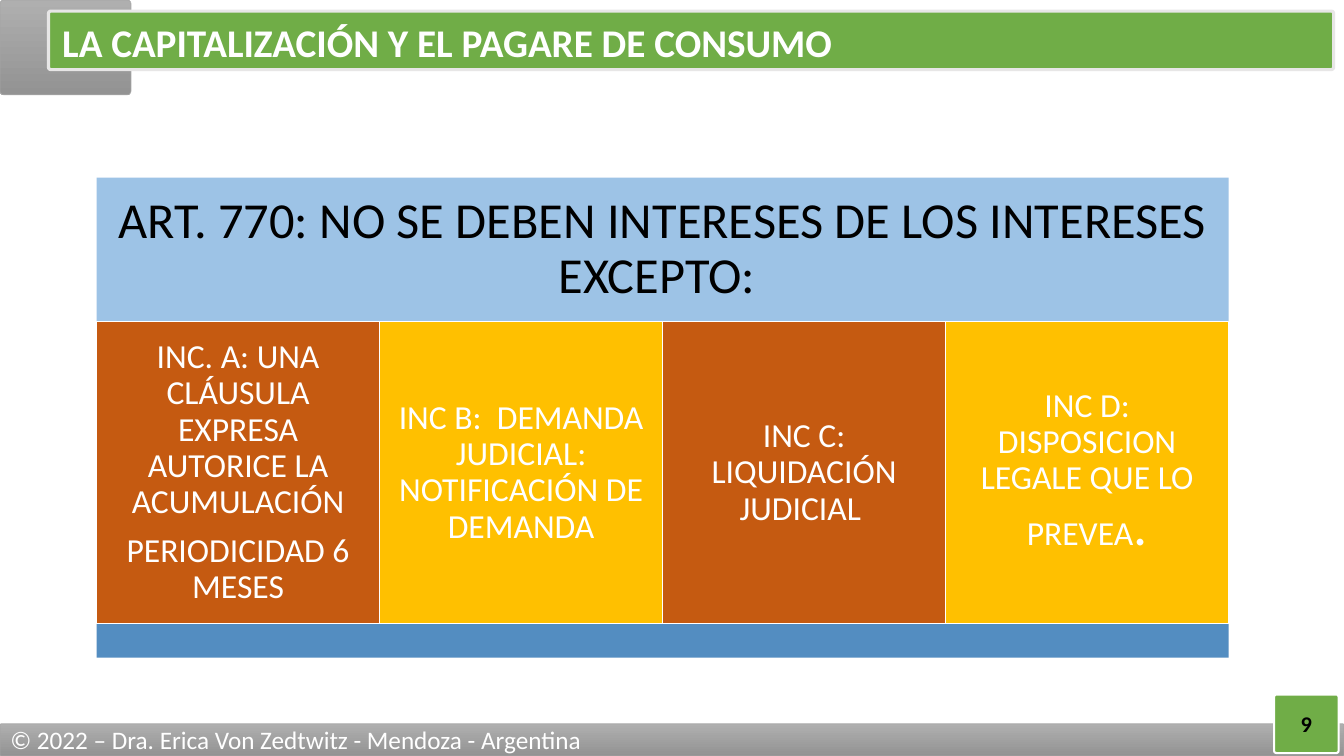
from pptx import Presentation
from pptx.dml.color import RGBColor
from pptx.enum.shapes import MSO_SHAPE as Shape
from pptx.enum.text import MSO_ANCHOR as Anchor, PP_ALIGN as Align
from pptx.util import Pt

# Content
TITLE = "LA CAPITALIZACIÓN Y EL PAGARE DE CONSUMO"
FOOTER = "© 2022 – Dra. Erica Von Zedtwitz - Mendoza - Argentina"
PAGE_NUMBER = "9"
RULE = "ART. 770: NO SE DEBEN INTERESES DE LOS INTERESES EXCEPTO: "
# Each exception is a list of paragraphs; each paragraph is a list of (text, size)
EXCEPTIONS = [
    [[("INC. A: UNA CLÁUSULA EXPRESA AUTORICE LA ACUMULACIÓN", 24)],
     [("PERIODICIDAD 6 MESES", 24)]],
    [[("INC B:  DEMANDA JUDICIAL: NOTIFICACIÓN DE DEMANDA", 24)]],
    [[("INC C: LIQUIDACIÓN JUDICIAL ", 24)]],
    [[("INC D: DISPOSICION LEGALE QUE LO PREVEA", 24), (".", 40)]],
]

# Style
FONT = "Calibri"
WHITE, BLACK, GREEN = "FFFFFF", "000000", "70AD47"
GRAY, GRAY_TOP, GRAY_BOTTOM, PALE = "A5A5A5", "AFAFAF", "939393", "E7E6E6"
LIGHT_BLUE, BLUE = "9DC3E6", "538DC1"
EXCEPTION_FILLS = ["C55A11", "FFC000"]

# Layout, in points
WIDTH, HEIGHT = 960, 540
LEFT, TOP, TABLE_WIDTH = 69, 126.9, 808.6
RULE_HEIGHT, EXCEPTION_HEIGHT, BASE_HEIGHT = 102.9, 216, 24
PARAGRAPH_GAP = 9


def color(code):
    return RGBColor.from_string(code)


def add_box(kind, left, top, width, height, fill=None, line=None):
    """Add a shape; fill is a colour or a (top, bottom) pair, line a (colour, width)."""
    box = page.shapes.add_shape(kind, Pt(left), Pt(top), Pt(width), Pt(height))
    box.shadow.inherit = False
    if kind == Shape.ROUNDED_RECTANGLE:
        box.adjustments[0] = 0.04
    if isinstance(fill, tuple):
        box.fill.gradient()
        box.fill.gradient_angle = 270
        for stop, code in zip(box.fill.gradient_stops, fill):
            stop.color.rgb = color(code)
    else:
        box.fill.solid()
        box.fill.fore_color.rgb = color(fill)
    if line:
        box.line.color.rgb = color(line[0])
        box.line.width = Pt(line[1])
    else:
        box.line.fill.background()
    return box


def write(box, paras, code, align=Align.CENTER, bold=False, spacing=0.9, inset=None):
    frame = box.text_frame
    frame.word_wrap = True
    frame.vertical_anchor = Anchor.MIDDLE
    if inset is not None:
        frame.margin_left = frame.margin_right = Pt(inset)
        frame.margin_top = frame.margin_bottom = Pt(inset)
    for index, spans in enumerate(paras):
        para = frame.add_paragraph() if index else frame.paragraphs[0]
        para.alignment = align
        para.line_spacing = spacing
        para.space_before = Pt(PARAGRAPH_GAP if index else 0)
        for text, size in spans:
            span = para.add_run()
            span.text = text
            span.font.name = FONT
            span.font.size = Pt(size)
            span.font.bold = bold
            span.font.color.rgb = color(code)


deck = Presentation()
deck.slide_width, deck.slide_height = Pt(WIDTH), Pt(HEIGHT)
page = deck.slides.add_slide(deck.slide_layouts[6])

# Header
gradient = (GRAY_TOP, GRAY_BOTTOM)
add_box(Shape.ROUNDED_RECTANGLE, 0, 0, 93.6, 67.7, gradient, (GRAY, 0.5))
add_box(Shape.ROUNDED_RECTANGLE, 34.6, 7.9, 918, 41.8, GREEN, (PALE, 2.25))
title = page.shapes.add_textbox(Pt(37.4), Pt(14.4), Pt(914.4), Pt(35.3))
write(title, [[(TITLE, 28)]], WHITE, Align.LEFT, bold=True)

# Footer and page number
footer = add_box(Shape.ROUNDED_RECTANGLE, 0, 517, WIDTH, 23, gradient, (GRAY, 0.5))
write(footer, [[(FOOTER, 18)]], WHITE, Align.LEFT, spacing=1.0)
number = add_box(Shape.ROUNDED_RECTANGLE, 910.1, 496.1, 46.1, 41.8, GREEN, (WHITE, 1.5))
write(number, [[(PAGE_NUMBER, 16)]], BLACK, bold=True, spacing=1.0)

# Rule
rule = add_box(Shape.RECTANGLE, LEFT, TOP, TABLE_WIDTH, RULE_HEIGHT, LIGHT_BLUE)
write(rule, [[(RULE, 36)]], BLACK, inset=10.8)

# Exceptions in equal columns
column_width = TABLE_WIDTH / len(EXCEPTIONS)
exceptions_top = TOP + RULE_HEIGHT
for index, paras in enumerate(EXCEPTIONS):
    fill = EXCEPTION_FILLS[index % len(EXCEPTION_FILLS)]
    cell = add_box(Shape.RECTANGLE, LEFT + index * column_width, exceptions_top,
                   column_width, EXCEPTION_HEIGHT, fill, (WHITE, 1))
    write(cell, paras, WHITE, inset=7.2)

# Base strip
add_box(Shape.RECTANGLE, LEFT, exceptions_top + EXCEPTION_HEIGHT,
        TABLE_WIDTH, BASE_HEIGHT, BLUE)

deck.save("out.pptx")
